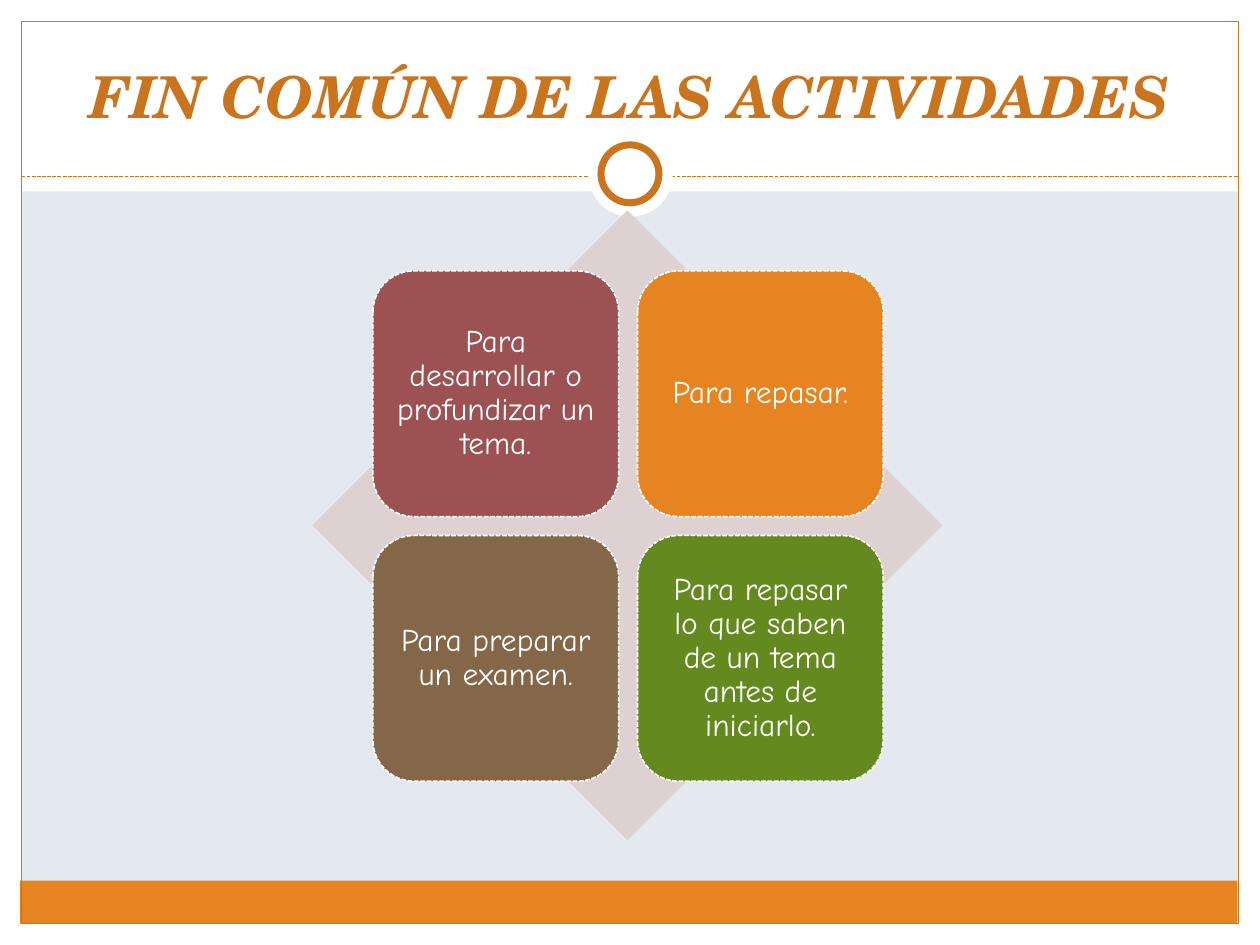
from dataclasses import dataclass
from typing import Optional

import pptx
import pptx.dml.color
import pptx.enum.dml
import pptx.enum.shapes
import pptx.enum.text
import pptx.oxml.ns
import pptx.util
from lxml import etree

Inches = pptx.util.Inches
Pt = pptx.util.Pt
RGBColor = pptx.dml.color.RGBColor
Preset = pptx.enum.shapes.MSO_SHAPE
Anchor = pptx.enum.text.MSO_ANCHOR
DASH = pptx.enum.dml.MSO_LINE.SQUARE_DOT  # saved as sysDot
SHORT_DASH = pptx.enum.dml.MSO_LINE.DASH

WHITE = RGBColor(0xFF, 0xFF, 0xFF)
BACKGROUND = RGBColor(0xE4, 0xE9, 0xEF)
ORANGE = RGBColor(0xE6, 0x84, 0x22)
DARK_ORANGE = RGBColor(0xCB, 0x74, 0x1E)
PALE_ROSE = RGBColor(0xDE, 0xD1, 0xD1)
WINE = RGBColor(0x9C, 0x52, 0x52)
BROWN = RGBColor(0x84, 0x66, 0x48)
GREEN = RGBColor(0x63, 0x89, 0x1F)

SLIDE_WIDTH, SLIDE_HEIGHT = 10, 7.5
MARGIN = 0.17
CARD_LEFT, CARD_TOP, CARD_SIZE, CARD_STEP = 2.96, 2.15, 1.95, 2.1
CARD_INSET = 0.07


@dataclass
class Panel:
    left: float
    top: float
    width: float
    height: float
    fill: Optional[RGBColor] = None
    preset: Preset = Preset.RECTANGLE
    line: Optional[RGBColor] = None
    line_width: float = 0.75


@dataclass
class Card:
    text: str
    fill: RGBColor


PANELS = [
    Panel(0, SLIDE_HEIGHT - MARGIN, SLIDE_WIDTH, MARGIN, WHITE),
    Panel(0, 0, SLIDE_WIDTH, 1.52, WHITE),
    Panel(0, 0, MARGIN, SLIDE_HEIGHT, WHITE),
    Panel(SLIDE_WIDTH - MARGIN, 0, MARGIN, SLIDE_HEIGHT, WHITE),
    Panel(0.16, 6.99, 9.66, 0.34, ORANGE),
    Panel(MARGIN, MARGIN, SLIDE_WIDTH - 2 * MARGIN, SLIDE_HEIGHT - 2 * MARGIN,
          line=DARK_ORANGE),
]
RING = [
    Panel(4.67, 1.05, 0.67, 0.67, WHITE, Preset.OVAL),
    Panel(4.77, 1.15, 0.46, 0.46, WHITE, Preset.OVAL, DARK_ORANGE, 4),
]
DIAMOND = Panel(2.48, 1.67, 5, 5, PALE_ROSE, Preset.DIAMOND)
CARDS = [
    Card("Para desarrollar o profundizar un tema.", WINE),
    Card("Para repasar.", ORANGE),
    Card("Para preparar un examen.", BROWN),
    Card("Para repasar lo que saben de un tema antes de iniciarlo.", GREEN),
]
TITLE_FONT = {"name": "TeX Gyre Schola", "size": Pt(33), "bold": True, "italic": True}
CARD_FONT = {"name": "Comic Neue", "size": Pt(18)}
CARD_PARAGRAPH = {"line_spacing": 0.9, "space_after": Pt(6.3)}
CARD_FRAME = {
    "margin_left": Inches(CARD_INSET),
    "margin_right": Inches(CARD_INSET),
    "margin_top": Inches(CARD_INSET),
    "margin_bottom": Inches(CARD_INSET),
    "vertical_anchor": Anchor.MIDDLE,
}


def set_attributes(target: object, values: dict) -> None:
    for name, value in values.items():
        setattr(target, name, value)


def set_short_dash(line: pptx.dml.line.LineFormat) -> None:
    """Use the sysDash pattern, which the dash_style enumeration lacks."""
    line.dash_style = SHORT_DASH
    line._ln.find(pptx.oxml.ns.qn("a:prstDash")).set("val", "sysDash")


def write_text(shape, text: str, color: RGBColor, frame_format: dict,
               font_format: dict, paragraph_format: dict) -> None:
    frame = shape.text_frame
    set_attributes(frame, {"word_wrap": True, **frame_format})
    paragraph = frame.paragraphs[0]
    set_attributes(paragraph, {"alignment": pptx.enum.text.PP_ALIGN.CENTER,
                               **paragraph_format})
    run = paragraph.add_run()
    run.text = text
    set_attributes(run.font, font_format)
    run.font.color.rgb = color


def add_panel(slide: pptx.slide.Slide, panel: Panel) -> pptx.shapes.autoshape.Shape:
    shape = slide.shapes.add_shape(
        panel.preset, Inches(panel.left), Inches(panel.top),
        Inches(panel.width), Inches(panel.height))
    shape.shadow.inherit = False
    if panel.fill is None:
        shape.fill.background()
    else:
        shape.fill.solid()
        shape.fill.fore_color.rgb = panel.fill
    if panel.line is None:
        shape.line.fill.background()
    else:
        shape.line.color.rgb = panel.line
        shape.line.width = Pt(panel.line_width)
    return shape


def add_divider(slide: pptx.slide.Slide) -> None:
    divider = slide.shapes.add_connector(
        pptx.enum.shapes.MSO_CONNECTOR.STRAIGHT,
        Inches(MARGIN), Inches(1.4), Inches(SLIDE_WIDTH - MARGIN), Inches(1.4))
    divider.line.color.rgb = DARK_ORANGE
    divider.line.width = Pt(0.75)
    set_short_dash(divider.line)
    etree.SubElement(divider._element.spPr, pptx.oxml.ns.qn("a:effectLst"))


def add_title(slide: pptx.slide.Slide) -> None:
    title = slide.shapes.add_textbox(Inches(0.33), Inches(0.25), Inches(9.33), Inches(0.83))
    write_text(title, "FIN COMÚN DE LAS ACTIVIDADES", DARK_ORANGE,
               {"vertical_anchor": Anchor.BOTTOM}, TITLE_FONT, {})


def add_cards(slide: pptx.slide.Slide) -> None:
    for index, card in enumerate(CARDS):
        row, column = divmod(index, 2)
        shape = add_panel(slide, Panel(
            CARD_LEFT + column * CARD_STEP, CARD_TOP + row * CARD_STEP,
            CARD_SIZE, CARD_SIZE, card.fill, Preset.ROUNDED_RECTANGLE, WHITE, 0.9))
        set_short_dash(shape.line)
        write_text(shape, card.text, WHITE, CARD_FRAME, CARD_FONT, CARD_PARAGRAPH)


def main() -> None:
    presentation = pptx.Presentation()
    presentation.slide_width = Inches(SLIDE_WIDTH)
    presentation.slide_height = Inches(SLIDE_HEIGHT)
    slide = presentation.slides.add_slide(presentation.slide_layouts[6])
    slide.background.fill.solid()
    slide.background.fill.fore_color.rgb = BACKGROUND

    for panel in PANELS:
        add_panel(slide, panel)
    add_divider(slide)
    for panel in RING:
        add_panel(slide, panel)
    add_title(slide)
    add_panel(slide, DIAMOND)
    add_cards(slide)
    presentation.save("out.pptx")


if __name__ == "__main__":
    main()
